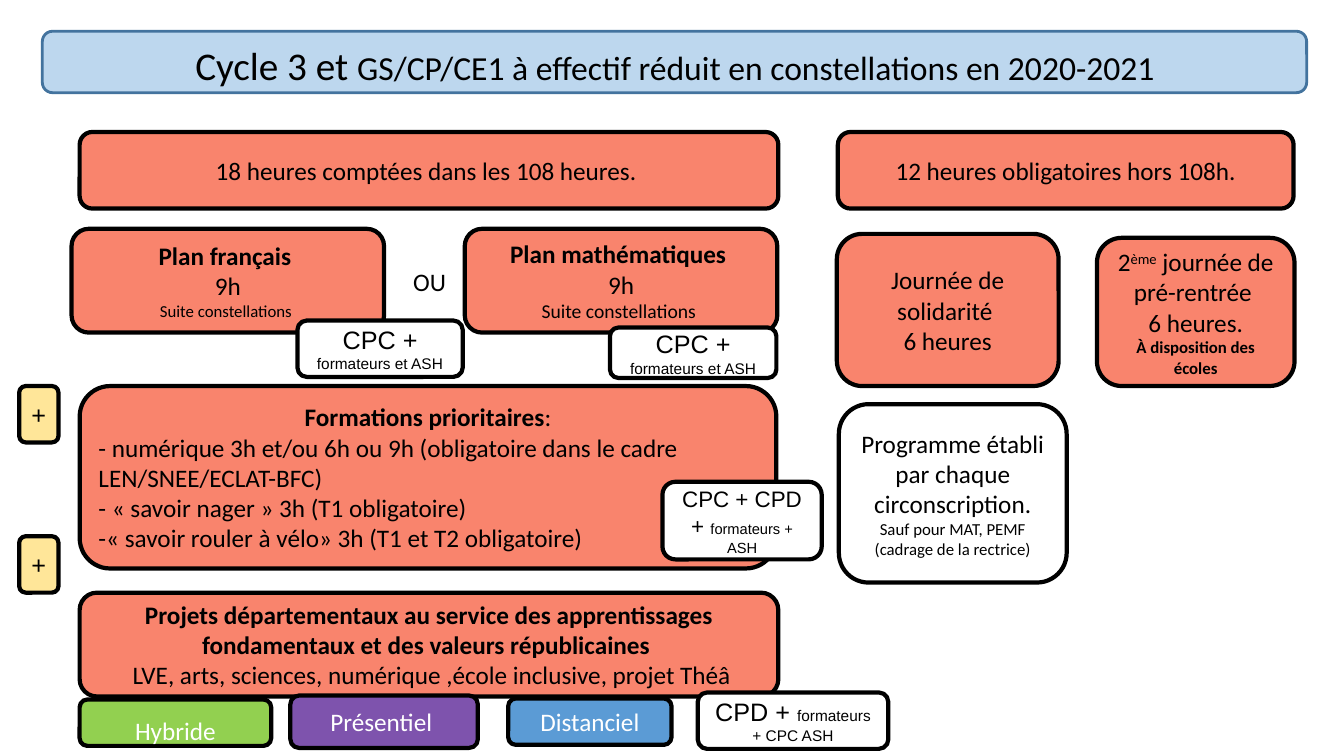
from dataclasses import dataclass

from pptx import Presentation
from pptx.dml.color import RGBColor
from pptx.enum import shapes, text
from pptx.util import Inches, Pt

BLACK = RGBColor(0x00, 0x00, 0x00)
WHITE = RGBColor(0xFF, 0xFF, 0xFF)
CORAL = RGBColor(0xF9, 0x84, 0x6D)
SAND = RGBColor(0xFF, 0xE6, 0x99)
SKY = RGBColor(0xBD, 0xD7, 0xEE)
STEEL = RGBColor(0x43, 0x73, 0x9E)
GREEN = RGBColor(0x92, 0xD0, 0x50)
PURPLE = RGBColor(0x7E, 0x53, 0xAD)
BLUE = RGBColor(0x5B, 0x9B, 0xD5)

MID, LEFT = text.PP_ALIGN.CENTER, text.PP_ALIGN.LEFT
ROUND = shapes.MSO_SHAPE.ROUNDED_RECTANGLE
RECT = shapes.MSO_SHAPE.RECTANGLE


@dataclass(frozen=True)
class Run:
    words: str
    size: float = 18
    bold: bool = False
    raised: bool = False


@dataclass(frozen=True)
class Para:
    runs: tuple[Run, ...]
    align: text.PP_ALIGN = MID


@dataclass(frozen=True)
class Box:
    at: tuple[float, float, float, float]
    paras: tuple[Para, ...] = ()
    fill: RGBColor | None = CORAL
    font: str = "Calibri"
    ink: RGBColor = BLACK
    edge: RGBColor = BLACK
    width: float = 3
    kind: shapes.MSO_SHAPE = ROUND
    anchor: text.MSO_ANCHOR = text.MSO_ANCHOR.MIDDLE
    pad: tuple[float, float] = (0.05, 0.05)


def line(words: str, size: float = 18, bold: bool = False,
         align: text.PP_ALIGN = MID) -> Para:
    return Para((Run(words, size, bold),), align)


def write(frame, paras: tuple[Para, ...], *, font: str = "Calibri",
          ink: RGBColor = BLACK, anchor=text.MSO_ANCHOR.MIDDLE,
          pad: tuple[float, float] = (0.05, 0.05)) -> None:
    frame.word_wrap = True
    frame.auto_size = text.MSO_AUTO_SIZE.NONE
    frame.vertical_anchor = anchor
    frame.margin_left = frame.margin_right = Inches(0.1)
    frame.margin_top, frame.margin_bottom = map(Inches, pad)
    for i, para in enumerate(paras):
        p = frame.paragraphs[0] if i == 0 else frame.add_paragraph()
        p.alignment = para.align
        for part in para.runs:
            run = p.add_run()
            run.text = part.words
            run.font.name = font
            run.font.size = Pt(part.size)
            run.font.bold = part.bold
            run.font.color.rgb = ink
            if part.raised:
                run._r.get_or_add_rPr().set("baseline", "30000")


def draw(slide, box: Box):
    shape = slide.shapes.add_shape(box.kind, *map(Inches, box.at))
    shape.shadow.inherit = False
    if box.fill is None:
        shape.fill.background()
    else:
        shape.fill.solid()
        shape.fill.fore_color.rgb = box.fill
    shape.line.color.rgb = box.edge
    shape.line.width = Pt(box.width)
    write(shape.text_frame, box.paras, font=box.font, ink=box.ink,
          anchor=box.anchor, pad=box.pad)
    return shape


def plan(left: float, name: str, note: float) -> Box:
    """Box for one nine-hour subject plan."""
    return Box((left, 2.27, 3.1, 1.03), (
        line(name, bold=True), line("9h"),
        line("Suite constellations ", note)))


def staff(at: tuple[float, float, float, float], lead: str, rest: str,
          big: float = 18, small: float = 11) -> Box:
    """White tag naming the trainers."""
    return Box(at, (Para((Run(lead, big), Run(rest, small))),),
               fill=WHITE, font="Arial")


def plus(top: float) -> Box:
    return Box((0.19, top, 0.39, 0.56), (line("+"),), fill=SAND, font="Arial")


def mode(at: tuple[float, float, float, float], name: str, fill: RGBColor,
         pad: tuple[float, float] = (0.05, 0.05)) -> Box:
    """Legend key for a training mode."""
    return Box(at, (line(name),), fill=fill, ink=WHITE, pad=pad)


BAR = Box((0.42, 0.31, 12.54, 0.61), fill=SKY, edge=STEEL, width=2)
TITLE = Para((
    Run("Cycle 3 et ", 28),
    Run("GS/CP/CE1 à effectif réduit en constellations en 2020-2021", 24)))

BOXES = (
    Box((0.79, 1.31, 6.93, 0.76),
        (line("18 heures comptées dans les 108 heures. "),)),
    plan(0.71, "Plan français ", 12),
    plan(4.61, "Plan mathématiques ", 14),
    Box((4, 2.59, 0.58, 0.4), (line("OU", align=LEFT),), fill=None,
        edge=WHITE, width=0.75, kind=RECT, anchor=text.MSO_ANCHOR.TOP),
    Box((8.31, 1.31, 4.52, 0.76),
        (line("12 heures obligatoires hors 108h."),)),
    Box((0.79, 3.83, 6.91, 1.81), (
        Para((Run("Formations prioritaires", bold=True), Run(":"))),
        line("- numérique 3h et/ou 6h ou 9h (obligatoire dans le cadre "
             "LEN/SNEE/ECLAT-BFC)", align=LEFT),
        line("- « savoir nager » 3h (T1 obligatoire)", align=LEFT),
        line("-« savoir rouler à vélo» 3h (T1 et T2 obligatoire)",
             align=LEFT))),
    Box((8.3, 2.32, 2.2, 1.51),
        (line("Journée de solidarité "), line("6 heures"))),
    Box((10.88, 2.36, 1.96, 1.47), (
        Para((Run("2"), Run("ème", raised=True),
              Run(" journée de pré-rentrée "))),
        line("6 heures."),
        line("À disposition des écoles", 12, True))),
    Box((8.32, 4.01, 2.26, 1.77), (
        line("Programme établi par chaque circonscription."),
        line("Sauf pour MAT, PEMF (cadrage de la rectrice)", 12)),
        fill=WHITE),
    Box((0.79, 5.88, 6.93, 1.03), (
        line("Projets départementaux au service des apprentissages "
             "fondamentaux et des valeurs républicaines ", bold=True),
        line(" LVE, arts, sciences, numérique ,école inclusive, "
             "projet Théâ"))),
    staff((2.95, 3.18, 1.64, 0.56), "CPC + ", "formateurs et ASH"),
    staff((6.57, 4.78, 1.58, 0.77), "CPC + CPD + ", "formateurs + ASH",
          16, 10.5),
    staff((6.92, 6.87, 1.89, 0.56), "CPD + ", "formateurs + CPC ASH"),
    plus(3.83),
    plus(5.32),
    mode((2.88, 6.9, 1.86, 0.52), "Présentiel ", PURPLE),
    mode((0.79, 6.94, 1.9, 0.46), "Hybride", GREEN, pad=(0.15, 0)),
    mode((5.04, 6.93, 1.62, 0.46), "Distanciel", BLUE),
    staff((6.05, 3.25, 1.65, 0.5), "CPC + ", "formateurs et ASH"),
)


def main() -> None:
    deck = Presentation()
    deck.slide_width, deck.slide_height = Inches(13.33), Inches(7.5)
    slide = deck.slides.add_slide(deck.slide_layouts.get_by_name("Title Only"))
    bar = draw(slide, BAR)
    title = slide.shapes.title
    title.left, title.top, title.width, title.height = map(
        Inches, (0.79, 0.36, 11.81, 0.57))
    write(title.text_frame, (TITLE,), anchor=text.MSO_ANCHOR.TOP)
    bar.element.addnext(title.element)  # title sits in front of its bar
    for box in BOXES:
        draw(slide, box)
    deck.save("out.pptx")


if __name__ == "__main__":
    main()
